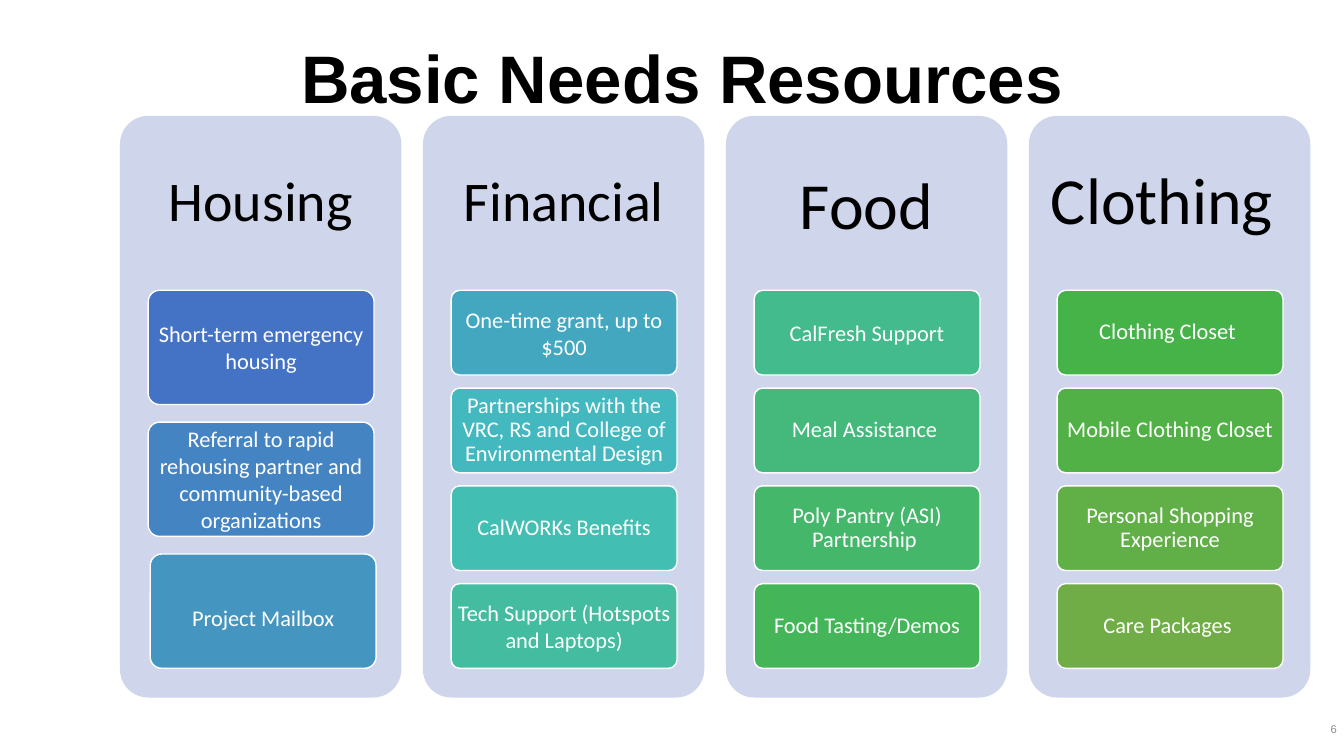
from dataclasses import dataclass

from pptx import Presentation
from pptx import util as u
from pptx.dml.color import RGBColor
from pptx.enum import shapes, text

PANEL_LEFT, PANEL_TOP, PANEL_WIDTH, PANEL_HEIGHT = 1.19, 1.15, 2.79, 5.77
PANEL_PITCH = 3.005
HEADING_HEIGHT = 1.73
CARD_INDENT, CARD_WIDTH = 0.28, 2.24
CARDS_TOP, CARDS_HEIGHT = 2.88, 3.75
GAP_RATIO = 0.154


@dataclass
class Card:
    label: str
    fill: str
    line_spacing: float = 0.9
    shift: float = 0


@dataclass
class Column:
    heading: str
    size: float
    inset: float
    cards: list[Card]
    line_spacing: float = 0.9


COLUMNS = [
    Column("Housing", 40, 0.17, [
        Card("Short-term emergency housing", "4472C4", 1),
        Card("Referral to rapid rehousing partner and community-based organizations", "4484C3", 1),
        Card("Project Mailbox", "4496C1", 1.5, 0.02),
    ]),
    Column("Financial", 40, 0.17, [
        Card("One-time grant, up to $500", "43A7C0", 1),
        Card("Partnerships with the VRC, RS and College of Environmental Design", "43B8BF"),
        Card("CalWORKs Benefits", "43BEB3"),
        Card("Tech Support (Hotspots and Laptops)", "43BCA0", 1),
    ]),
    Column("Food", 47, 0.2, [
        Card("CalFresh Support", "43BB8D", 1),
        Card("Meal Assistance ", "44B97B"),
        Card("Poly Pantry (ASI) Partnership ", "44B76A"),
        Card("Food Tasting/Demos", "45B559"),
    ], 1),
    Column("Clothing ", 47, 0.2, [
        Card("Clothing Closet ", "46B349"),
        Card("Mobile Clothing Closet", "52B146"),
        Card("Personal Shopping Experience", "61AF47"),
        Card("Care Packages ", "70AD47"),
    ]),
]


def color(value: str) -> RGBColor:
    return RGBColor.from_string(value)


def write(box, words: str, size: float, ink: str, face: str = "Calibri",
          inset: tuple[float, float] = (0.1, 0.05), line_spacing: float = 1.0,
          align=text.PP_ALIGN.CENTER, anchor=text.MSO_ANCHOR.MIDDLE, bold: bool = False) -> None:
    """Fill a shape with one formatted paragraph; inset is (sides, top and bottom)."""
    frame = box.text_frame
    frame.text = words
    frame.word_wrap = True
    frame.auto_size = text.MSO_AUTO_SIZE.NONE
    frame.vertical_anchor = anchor
    frame.margin_left = frame.margin_right = u.Inches(inset[0])
    frame.margin_top = frame.margin_bottom = u.Inches(inset[1])
    para = frame.paragraphs[0]
    para.alignment = align
    para.line_spacing = line_spacing
    font = para.runs[0].font
    font.name, font.size, font.bold = face, u.Pt(size), bold
    font.color.rgb = color(ink)


def add_rounded(page, left: float, top: float, width: float, height: float, fill: str):
    box = page.shapes.add_shape(shapes.MSO_SHAPE.ROUNDED_RECTANGLE, u.Inches(left),
                                u.Inches(top), u.Inches(width), u.Inches(height))
    box.adjustments[0] = 0.1
    box.shadow.inherit = False
    box.fill.solid()
    box.fill.fore_color.rgb = color(fill)
    box.line.fill.background()
    return box


def add_column(page, column: Column, left: float) -> None:
    add_rounded(page, left, PANEL_TOP, PANEL_WIDTH, PANEL_HEIGHT, "CFD5EA")
    heading = page.shapes.add_textbox(u.Inches(left), u.Inches(PANEL_TOP),
                                      u.Inches(PANEL_WIDTH), u.Inches(HEADING_HEIGHT))
    write(heading, column.heading, column.size, "000000",
          inset=(column.inset, column.inset), line_spacing=column.line_spacing)

    count = len(column.cards)
    height = CARDS_HEIGHT / (count + (count - 1) * GAP_RATIO)
    for row, card in enumerate(column.cards):
        top = CARDS_TOP + row * height * (1 + GAP_RATIO)
        box = add_rounded(page, left + CARD_INDENT + card.shift, top, CARD_WIDTH, height, card.fill)
        box.line.color.rgb = color("FFFFFF")
        box.line.width = u.Pt(1)
        write(box, card.label, 16, "FFFFFF", inset=(0.04, 0.03), line_spacing=card.line_spacing)


def main() -> None:
    deck = Presentation()
    deck.slide_width, deck.slide_height = u.Inches(13.33), u.Inches(7.5)
    page = deck.slides.add_slide(deck.slide_layouts[5])

    title = page.shapes.title
    title.left, title.top = u.Inches(1.12), u.Inches(0.4)
    title.width, title.height = u.Inches(11.29), u.Inches(1.45)
    write(title, "Basic Needs Resources", 48, "000000", "Arial", line_spacing=0.9,
          anchor=text.MSO_ANCHOR.TOP, bold=True)

    number = page.shapes.add_textbox(u.Inches(12.79), u.Inches(7.03), u.Inches(0.54), u.Inches(0.4))
    write(number, "6", 8, "8C8C8C", "Arial", (0.07, 0.03), align=text.PP_ALIGN.RIGHT)

    for index, column in enumerate(COLUMNS):
        add_column(page, column, PANEL_LEFT + index * PANEL_PITCH)

    deck.save("out.pptx")


if __name__ == "__main__":
    main()
